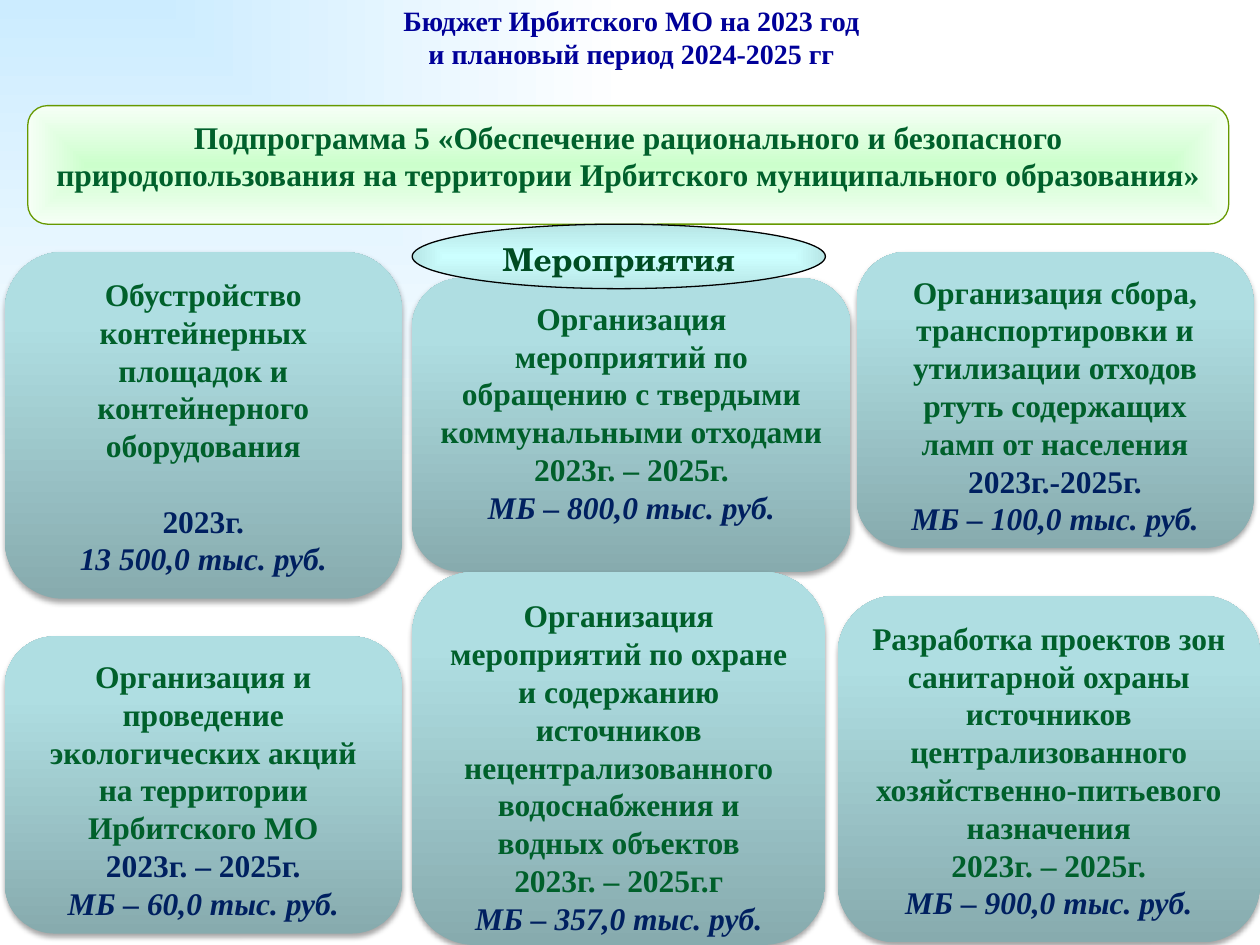
from pptx import Presentation
from pptx.dml.color import RGBColor
from pptx.enum.shapes import MSO_SHAPE as Shape
from pptx.enum.text import MSO_ANCHOR as Anchor, PP_ALIGN as Align
from pptx.oxml import parse_xml
from pptx.oxml.ns import nsdecls
from pptx.util import Cm, Pt

COLORS = {
    "title": "000099", "green": "00602B", "navy": "002060", "oval_text": "004C22",
    "sky": "CCECFF", "white": "FFFFFF", "mint": "CCFFCC", "pale_mint": "F6FFF6",
    "olive": "669900", "black": "000000", "aqua": "CCFFFF", "teal": "B7E5E5",
    "card_dark": "87ABAE", "card_mid": "AFDEE2", "card_light": "AFE0E4",
}
SERIF = "Times New Roman"

# Box (left, top, width, height in cm), task, period, period colour, sum, gap before period (pt)
CARDS = [
    ((8.31, 5.61, 8.84, 5.92),
     "Организация мероприятий по обращению с твердыми коммунальными отходами",
     "2023г. – 2025г.", "green", "МБ – 800,0 тыс. руб.", 0),
    ((0.1, 5.08, 8, 6.99),
     "Обустройство контейнерных площадок и контейнерного оборудования",
     "2023г.", "navy", "13 500,0 тыс. руб.", 21.5),
    ((17.27, 5.08, 8, 5.97),
     "Организация сбора, транспортировки и утилизации отходов ртуть содержащих "
     "ламп от населения",
     "2023г.-2025г.", "navy", "МБ – 100,0 тыс. руб.", 0),
    ((8.31, 11.53, 8.33, 7.52),
     "Организация мероприятий по охране и содержанию источников "
     "нецентрализованного водоснабжения и водных объектов",
     "2023г. – 2025г.г", "green", "МБ – 357,0 тыс. руб.", 0),
    ((16.89, 12.01, 8.51, 6.99),
     "Разработка проектов зон санитарной охраны источников централизованного "
     "хозяйственно-питьевого назначения",
     "2023г. – 2025г.", "green", "МБ – 900,0 тыс. руб.", 0),
    ((0.1, 12.83, 8, 5.99),
     "Организация и проведение экологических акций на территории Ирбитского МО",
     "2023г. – 2025г.", "navy", "МБ – 60,0 тыс. руб.", 0),
]


def set_gradient(fill, owner, stops, direction):
    """Replace the default gradient with the given stops and direction XML."""
    fill.gradient()
    gradient = owner.xpath(".//a:gradFill")[0]
    stop_xml = "".join(
        f'<a:gs pos="{pos * 1000}"><a:srgbClr val="{COLORS[name]}"/></a:gs>'
        for pos, name in stops)
    gradient.getparent().replace(gradient, parse_xml(
        f'<a:gradFill {nsdecls("a")} rotWithShape="1">'
        f'<a:gsLst>{stop_xml}</a:gsLst>{direction}</a:gradFill>'))


def radial(kind, left, top, right, bottom):
    return (f'<a:path path="{kind}"><a:fillToRect l="{left * 1000}" t="{top * 1000}" '
            f'r="{right * 1000}" b="{bottom * 1000}"/></a:path>')


def add_text(frame, text, color="green", size=18, font=SERIF, italic=False, gap=0):
    """Write one centred bold paragraph, reusing the empty first one."""
    first = frame.paragraphs[0]
    paragraph = frame.add_paragraph() if first.runs else first
    paragraph.alignment = Align.CENTER
    if gap:
        paragraph.space_before = Pt(gap)
    run = paragraph.add_run()
    run.text = text
    run.font.name, run.font.size = font, Pt(size)
    run.font.bold, run.font.italic = True, italic
    run.font.color.rgb = RGBColor.from_string(COLORS[color])


def add_panel(slide, kind, box, stops, direction, line=None):
    panel = slide.shapes.add_shape(kind, *map(Cm, box))
    panel.shadow.inherit = False
    set_gradient(panel.fill, panel._element, stops, direction)
    if line:
        panel.line.color.rgb = RGBColor.from_string(COLORS[line])
        panel.line.width = Pt(0.75)
    else:
        panel.line.fill.background()
    panel.text_frame.word_wrap = True
    panel.text_frame.vertical_anchor = Anchor.TOP
    return panel


def add_background(slide):
    set_gradient(slide.background.fill, slide._element,
                 [(0, "sky"), (100, "white")], radial("rect", 0, 0, 100, 100))


def add_title(slide, box):
    frame = slide.shapes.add_textbox(*map(Cm, box)).text_frame
    frame.word_wrap = True
    frame.vertical_anchor = Anchor.MIDDLE
    frame.margin_top, frame.margin_bottom = 0, Cm(0.68)  # lifts the lines
    for line in ("Бюджет Ирбитского МО на 2023 год", "и плановый период 2024-2025 гг"):
        add_text(frame, line, color="title", size=16)


def add_subprogram(slide, box):
    banner = add_panel(slide, Shape.ROUNDED_RECTANGLE, box,
                       [(0, "mint"), (100, "pale_mint")],
                       radial("shape", 50, 50, 50, 50), line="olive")
    add_text(banner.text_frame,
             "Подпрограмма 5 «Обеспечение рационального и безопасного "
             "природопользования на территории Ирбитского муниципального образования»")


def add_card(slide, box, task, period, period_color, amount, gap):
    card = add_panel(slide, Shape.ROUNDED_RECTANGLE, box,
                     [(0, "card_dark"), (80, "card_mid"), (100, "card_light")],
                     '<a:lin ang="16200000" scaled="0"/>')
    card._element.xpath("./p:spPr/a:effectLst")[0].append(parse_xml(
        f'<a:outerShdw {nsdecls("a")} blurRad="{Pt(3.1)}" dist="{Pt(1.8)}" '
        f'dir="5400000" rotWithShape="0"><a:srgbClr val="{COLORS["black"]}">'
        '<a:alpha val="35000"/></a:srgbClr></a:outerShdw>'))
    add_text(card.text_frame, task)
    add_text(card.text_frame, period, color=period_color, gap=gap)
    add_text(card.text_frame, amount, color="navy", italic=True)


def add_activities_oval(slide, box):
    oval = add_panel(slide, Shape.OVAL, box, [(0, "aqua"), (100, "teal")],
                     radial("rect", 50, 50, 50, 50), line="black")
    add_text(oval.text_frame, "Мероприятия", color="oval_text", font="TeX Gyre Schola")


def main():
    deck = Presentation()
    deck.slide_width, deck.slide_height = Cm(25.4), Cm(19.05)
    slide = deck.slides.add_slide(deck.slide_layouts[6])
    add_background(slide)
    add_title(slide, (1.3, 0.43, 22.86, 1.3))
    add_subprogram(slide, (0.56, 2.13, 24.21, 2.39))
    for card in CARDS:
        add_card(slide, *card)
    # The oval overlaps the top of the middle card
    add_activities_oval(slide, (8.31, 4.52, 8.33, 1.3))
    deck.save("out.pptx")


if __name__ == "__main__":
    main()
